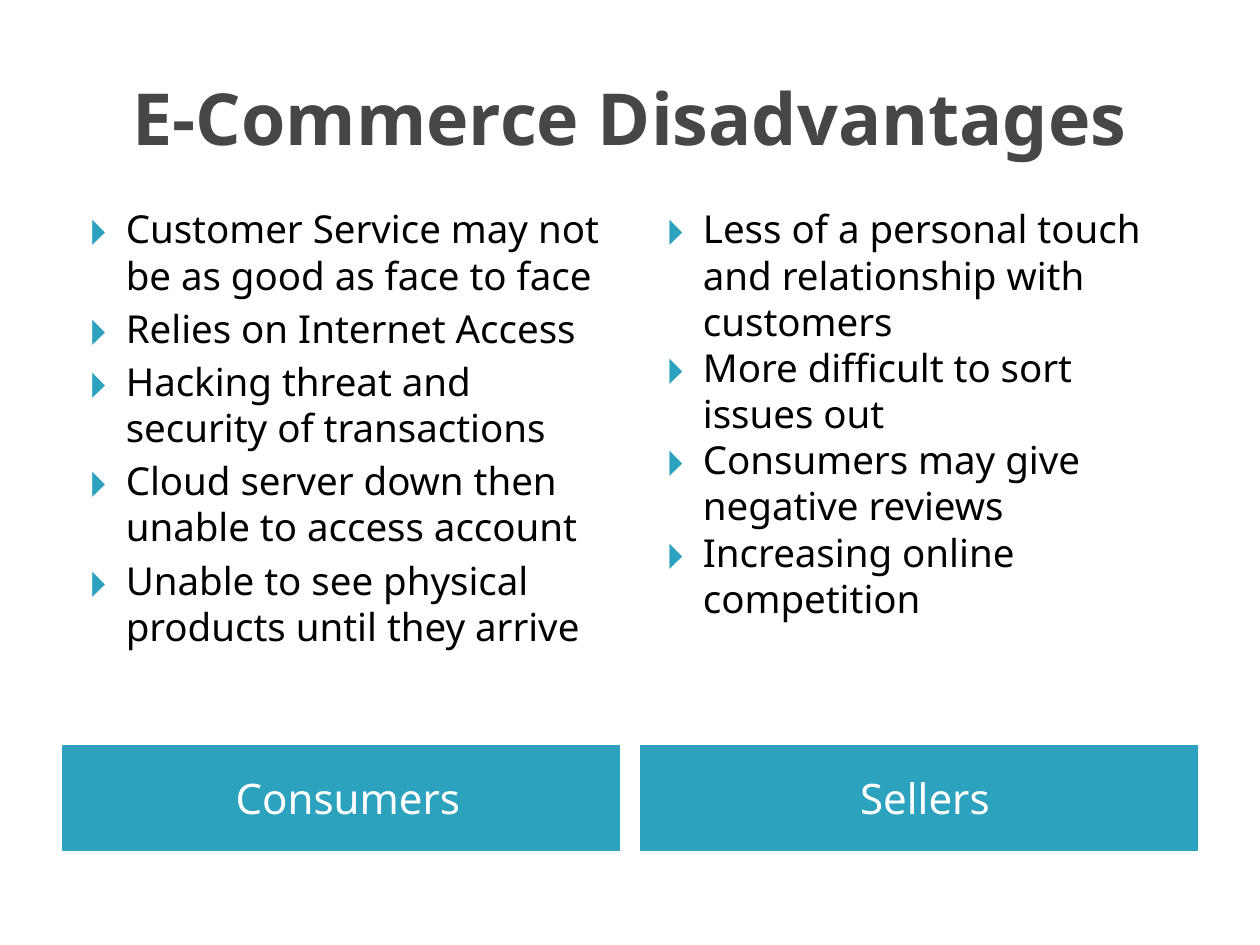
from dataclasses import dataclass

from lxml import etree
from pptx import Presentation
from pptx.dml.color import RGBColor
from pptx.enum import shapes, text
from pptx.oxml import ns
from pptx.util import Pt

TEAL = RGBColor(0x2D, 0xA2, 0xBF)
CHARCOAL = RGBColor(0x46, 0x46, 0x46)
BLACK = RGBColor(0, 0, 0)
WHITE = RGBColor(0xFF, 0xFF, 0xFF)

SLIDE_WIDTH, SLIDE_HEIGHT = 720, 540
MARGIN = 36
COLUMN_WIDTH = 318.2
POINTS_TOP, POINTS_HEIGHT = 113.8, 310.3
LABEL_TOP, LABEL_HEIGHT = 426.2, 59.8
HANGING = 20.2

TITLE_FONT = {"name": "Noto Sans", "size": Pt(41), "bold": True}
LABEL_FONT = {"name": "Noto Sans", "size": Pt(24)}
POINT_FONT = {"name": "Noto Sans", "size": Pt(22)}
BULLET_FONT = "Noto Sans Symbols"


@dataclass(frozen=True)
class Column:
    label: str
    left: float
    gap: float
    points: tuple[str, ...]


COLUMNS = (
    Column("Consumers", MARGIN, 4, (
        "Customer Service may not be as good as face to face",
        "Relies on Internet Access",
        "Hacking threat and security of transactions",
        "Cloud server down then unable to access account",
        "Unable to see physical products until they arrive",
    )),
    Column("Sellers", SLIDE_WIDTH - MARGIN - COLUMN_WIDTH, 0, (
        "Less of a personal touch and relationship with customers",
        "More difficult to sort issues out",
        "Consumers may give negative reviews",
        "Increasing online competition",
    )),
)


def set_format(target, values: dict) -> None:
    for name, value in values.items():
        setattr(target, name, value)


def set_font(paragraph, values: dict, color: RGBColor) -> None:
    set_format(paragraph.font, values)
    paragraph.font.color.rgb = color


def add_bullet(paragraph) -> None:
    """Give the paragraph a hanging teal arrowhead bullet."""
    properties = paragraph._p.get_or_add_pPr()
    properties.set("marL", str(Pt(28.8)))
    properties.set("indent", str(-Pt(HANGING)))
    bullet_color = etree.SubElement(properties, ns.qn("a:buClr"))
    etree.SubElement(bullet_color, ns.qn("a:srgbClr"), val=str(TEAL))
    etree.SubElement(properties, ns.qn("a:buFont"), typeface=BULLET_FONT)
    etree.SubElement(properties, ns.qn("a:buChar"), char="🞂")


def add_title(slide, wording: str) -> None:
    box = slide.shapes.add_textbox(
        Pt(MARGIN), Pt(21.6), Pt(SLIDE_WIDTH - 2 * MARGIN), Pt(90))
    frame = box.text_frame
    set_format(frame, {"word_wrap": True,
                       "vertical_anchor": text.MSO_ANCHOR.MIDDLE})
    title = frame.paragraphs[0]
    title.text = wording
    title.alignment = text.PP_ALIGN.CENTER
    set_font(title, TITLE_FONT, CHARCOAL)


def add_label(slide, column: Column) -> None:
    banner = slide.shapes.add_shape(
        shapes.MSO_SHAPE.RECTANGLE, Pt(column.left), Pt(LABEL_TOP),
        Pt(COLUMN_WIDTH), Pt(LABEL_HEIGHT))
    banner.shadow.inherit = False
    banner.fill.solid()
    banner.fill.fore_color.rgb = TEAL
    banner.line.color.rgb = TEAL
    banner.line.width = Pt(0.75)
    frame = banner.text_frame
    set_format(frame, {"word_wrap": True, "margin_left": Pt(14.4),
                       "vertical_anchor": text.MSO_ANCHOR.MIDDLE})
    label = frame.paragraphs[0]
    label.text = column.label
    label.alignment = text.PP_ALIGN.CENTER
    set_font(label, LABEL_FONT, WHITE)


def add_points(slide, column: Column) -> None:
    box = slide.shapes.add_textbox(
        Pt(column.left), Pt(POINTS_TOP), Pt(COLUMN_WIDTH), Pt(POINTS_HEIGHT))
    frame = box.text_frame
    frame.word_wrap = True
    for index, wording in enumerate(column.points):
        point = frame.add_paragraph() if index else frame.paragraphs[0]
        point.text = wording
        add_bullet(point)
        if index and column.gap:
            point.space_before = Pt(column.gap)
        set_font(point, POINT_FONT, BLACK)


def main() -> None:
    deck = Presentation()
    set_format(deck, {"slide_width": Pt(SLIDE_WIDTH),
                      "slide_height": Pt(SLIDE_HEIGHT)})
    slide = deck.slides.add_slide(deck.slide_layouts[6])
    add_title(slide, "E-Commerce Disadvantages")
    for column in COLUMNS:
        add_label(slide, column)
    for column in COLUMNS:
        add_points(slide, column)
    deck.save("out.pptx")


if __name__ == "__main__":
    main()
